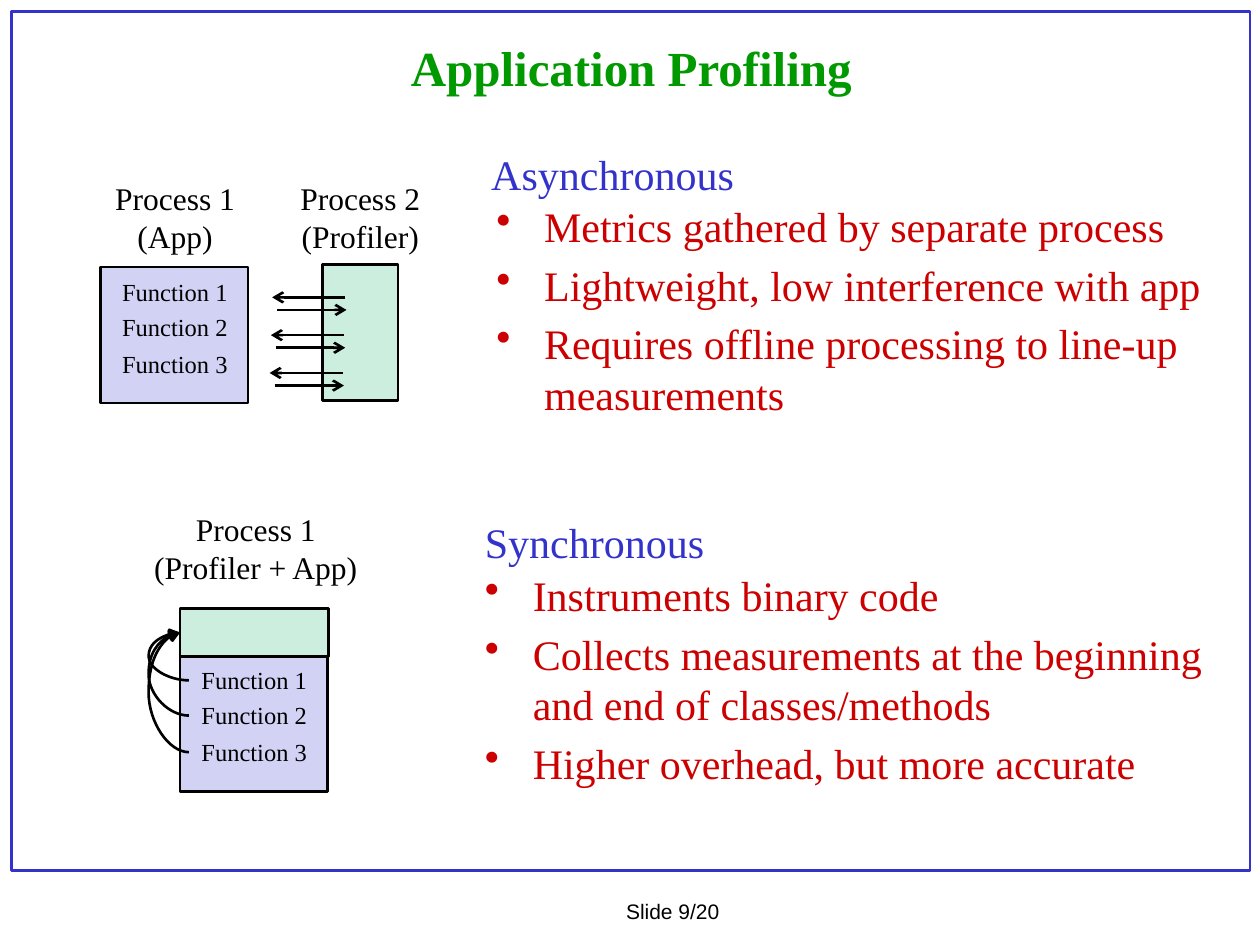
import pptx
import pptx.util
from pptx.dml.color import RGBColor
from pptx.enum.shapes import MSO_CONNECTOR, MSO_SHAPE
from pptx.enum.text import MSO_ANCHOR, PP_ALIGN
from pptx.oxml.ns import qn
from lxml import etree

PX = 9144  # EMU per px, 100 px to the inch
SERIF = "Times New Roman"
BLACK, BLUE, GREEN, RED = "000000", "3333CC", "009900", "CC0000"
APP_FILL, PROFILER_FILL = "D2D2F4", "CCEEDF"


def px(*lengths):
    return [pptx.util.Emu(length * PX) for length in lengths]


def color(target, value):
    target.rgb = RGBColor.from_string(value)


def add_text(slide, box, lines, size, ink=BLACK, font=SERIF, bold=False,
             align=PP_ALIGN.LEFT, wrap=False, anchor=MSO_ANCHOR.TOP, bullets=False):
    frame = slide.shapes.add_textbox(*px(*box)).text_frame
    frame.word_wrap = wrap
    frame.vertical_anchor = anchor
    for i, line in enumerate(lines):
        paragraph = frame.paragraphs[0] if i == 0 else frame.add_paragraph()
        paragraph.text = line
        paragraph.alignment = align
        if bullets:
            add_bullet(paragraph)
            if i:
                paragraph.space_before = pptx.util.Pt(size * 0.2)
        paragraph.font.name = font
        paragraph.font.size = pptx.util.Pt(size)
        paragraph.font.bold = bold
        color(paragraph.font.color, ink)


def add_bullet(paragraph):
    properties = paragraph._p.get_or_add_pPr()
    indent = 38 * PX
    properties.set("marL", str(indent))
    properties.set("indent", str(-indent))
    etree.SubElement(properties, qn("a:buChar")).set("char", "•")


def add_box(slide, box, fill=None, line=BLACK):
    shape = slide.shapes.add_shape(MSO_SHAPE.RECTANGLE, *px(*box))
    shape.shadow.inherit = False
    if fill:
        shape.fill.solid()
        color(shape.fill.fore_color, fill)
    else:
        shape.fill.background()
    color(shape.line.color, line)
    shape.line.width = pptx.util.Pt(1.5)


def add_arrow(slide, start, end, kind=MSO_CONNECTOR.STRAIGHT):
    arrow = slide.shapes.add_connector(kind, *px(*start, *end))
    color(arrow.line.color, BLACK)
    arrow.line.width = pptx.util.Pt(1.5)
    properties = arrow._element.spPr
    etree.SubElement(properties.find(qn("a:ln")), qn("a:tailEnd")).set("type", "arrow")
    etree.SubElement(properties, qn("a:effectLst"))
    return arrow


def add_curve(slide, start, end, bend_x):
    """Curved arrow whose middle bulges out to bend_x."""
    curve = add_arrow(slide, start, end, MSO_CONNECTOR.CURVE)
    geometry = curve._element.spPr.find(qn("a:prstGeom"))
    guides = geometry.find(qn("a:avLst"))
    if guides is None:
        guides = etree.SubElement(geometry, qn("a:avLst"))
    bend = round((bend_x - start[0]) / (end[0] - start[0]) * 100000)
    guide = etree.SubElement(guides, qn("a:gd"))
    guide.set("name", "adj1")
    guide.set("fmla", f"val {bend}")


def add_app(slide, left, top):
    """App process with its functions; returns the top of each function."""
    add_box(slide, (left, top, 117, 108), APP_FILL)
    function_tops = [top + 3 + i * 57 // 2 for i in range(3)]
    for number, function_top in enumerate(function_tops, 1):
        add_text(slide, (left + 7, function_top, 105, 34), [f"Function {number}"], 14)
    return function_tops


def add_process_label(slide, box, *lines):
    add_text(slide, box, lines, 18, align=PP_ALIGN.CENTER)


def add_asynchronous_diagram(slide, left, top):
    add_app(slide, left, top + 75)
    add_process_label(slide, (left + 1, top, 116, 71), "Process 1", "(App)")
    profiler_left, profiler_top = left + 176, top + 73
    add_box(slide, (profiler_left, profiler_top, 60, 108), PROFILER_FILL)
    add_process_label(slide, (left + 148, top, 116, 71), "Process 2", "(Profiler)")
    # Request and reply pairs
    for i in range(3):
        x, y = profiler_left - i, profiler_top + 26 + 30 * i
        add_arrow(slide, (x + 18, y), (x - 40, y))
        add_arrow(slide, (x - 36, y + 10), (x + 19, y + 10))


def add_synchronous_diagram(slide, left, top):
    app_left = left + 31
    function_tops = add_app(slide, app_left, top + 120)
    add_process_label(slide, (left, top, 182, 71), "Process 1", "(Profiler + App)")
    add_box(slide, (app_left, top + 83, 118, 38), PROFILER_FILL)
    # Calls from each function into the profiler
    for function_top in function_tops:
        add_curve(slide, (app_left + 7, function_top + 17), (app_left, top + 102),
                  app_left - 25)


def add_method(slide, heading_box, points_box, heading, points):
    add_text(slide, heading_box, [heading], 24, BLUE)
    add_text(slide, points_box, points, 24, RED, wrap=True, bullets=True)


def add_frame(slide):
    add_box(slide, (9, 9, 983, 682), line=BLUE)
    add_text(slide, (487, 708, 105, 30), ["Slide 9/20"], 12, font="Arial")
    add_text(slide, (24, 24, 954, 58), ["Application Profiling"], 28, GREEN, bold=True,
             align=PP_ALIGN.CENTER, wrap=True, anchor=MSO_ANCHOR.MIDDLE)


def main():
    deck = pptx.Presentation()
    deck.slide_width, deck.slide_height = px(1000, 750)
    slide = deck.slides.add_slide(deck.slide_layouts[6])
    add_frame(slide)
    add_asynchronous_diagram(slide, 80, 137)
    add_method(slide, (380, 113, 215, 50), (384, 154, 595, 194), "Asynchronous", [
        "Metrics gathered by separate process",
        "Lightweight, low interference with app",
        "Requires offline processing to line-up measurements",
    ])
    add_synchronous_diagram(slide, 112, 400)
    add_method(slide, (375, 405, 196, 50), (375, 447, 595, 194), "Synchronous", [
        "Instruments binary code",
        "Collects measurements at the beginning and end of classes/methods",
        "Higher overhead, but more accurate",
    ])
    deck.save("out.pptx")


if __name__ == "__main__":
    main()
